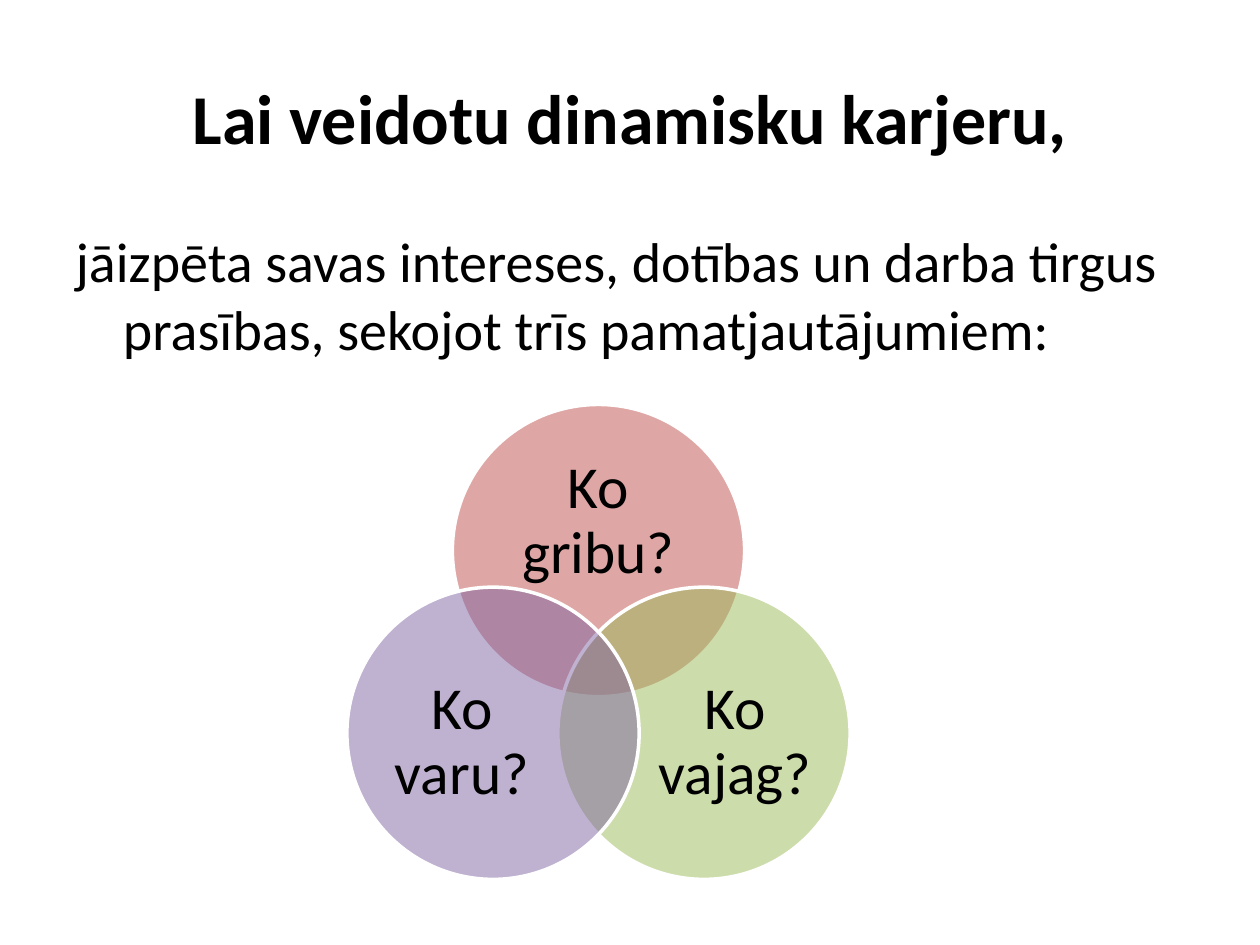
import math

from lxml import etree
from pptx import Presentation
from pptx import util as u
from pptx.dml.color import RGBColor
from pptx.enum import shapes, text
from pptx.oxml import ns

Pt = u.Pt


def color(hex_code):
    return RGBColor.from_string(hex_code)


class SlideBuilder:
    font = "Calibri"
    ink = "000000"
    outline = "FFFFFF"

    def __init__(self, slide):
        self.slide = slide

    def place(self, item, left, top, width, height):
        item.left, item.top = Pt(left), Pt(top)
        item.width, item.height = Pt(width), Pt(height)

    def add_words(self, frame, words, size, align, bold=False):
        frame.word_wrap = True
        frame.auto_size = text.MSO_AUTO_SIZE.NONE
        paragraph = frame.paragraphs[0]
        paragraph.alignment = align
        run = paragraph.add_run()
        run.text = words
        run.font.name, run.font.size, run.font.bold = self.font, Pt(size), bold
        run.font.color.rgb = color(self.ink)
        return paragraph

    def title(self, words, box):
        heading = self.slide.shapes.title
        self.place(heading, *box)
        heading.text_frame.vertical_anchor = text.MSO_ANCHOR.MIDDLE
        self.add_words(heading.text_frame, words, 40, text.PP_ALIGN.CENTER, bold=True)

    def body(self, words, box, hanging):
        intro = self.slide.placeholders[1]
        self.place(intro, *box)
        paragraph = self.add_words(intro.text_frame, words, 32, text.PP_ALIGN.LEFT)
        # Hanging indent without a bullet
        properties = paragraph._p.get_or_add_pPr()
        properties.set("marL", str(Pt(hanging)))
        properties.set("indent", str(-Pt(hanging)))
        etree.SubElement(properties, ns.qn("a:buNone"))

    def circle(self, center_x, center_y, diameter, fill, opacity=50):
        disc = self.slide.shapes.add_shape(
            shapes.MSO_SHAPE.OVAL, Pt(center_x - diameter / 2),
            Pt(center_y - diameter / 2), Pt(diameter), Pt(diameter))
        disc.shadow.inherit = False
        disc.fill.solid()
        disc.fill.fore_color.rgb = color(fill)
        tint = disc.fill._xPr.find(".//" + ns.qn("a:srgbClr"))
        etree.SubElement(tint, ns.qn("a:alpha"), val=str(opacity * 1000))
        disc.line.color.rgb = color(self.outline)
        disc.line.width = Pt(2)

    def label(self, words, box):
        question = self.slide.shapes.add_textbox(*map(Pt, box))
        frame = question.text_frame
        frame.margin_left = frame.margin_right = 0
        frame.margin_top = frame.margin_bottom = 0
        frame.vertical_anchor = text.MSO_ANCHOR.MIDDLE
        paragraph = self.add_words(frame, words, 34, text.PP_ALIGN.CENTER)
        paragraph.line_spacing = 0.9


def main():
    deck = Presentation()
    deck.slide_width, deck.slide_height = Pt(720), Pt(540)
    builder = SlideBuilder(deck.slides.add_slide(deck.slide_layouts[1]))

    # Heading and introduction
    builder.title("Lai veidotu dinamisku karjeru,", (36, 21.6, 648, 90))
    builder.body("jāizpēta savas intereses, dotības un darba tirgus prasības, "
                 "sekojot trīs pamatjautājumiem:", (36, 126, 672, 356.4), 27)

    # Three overlapping circles, evenly spaced around one centre
    venn_x, venn_y, reach, diameter = 342, 384.2, 69.6, 167
    questions = [
        ("Ko gribu?", "BF504D", (280.8, 260.6, 122.4, 75)),
        ("Ko vajag?", "9BBB59", (370, 378.7, 100, 91.4)),
        ("Ko varu?", "8064A2", (214, 378.7, 100, 91.4)),
    ]
    for index, (words, fill, box) in enumerate(questions):
        angle = math.radians(-90 + index * 360 / len(questions))
        builder.circle(venn_x + reach * math.cos(angle),
                       venn_y + reach * math.sin(angle), diameter, fill)
        builder.label(words, box)

    deck.save("out.pptx")


if __name__ == "__main__":
    main()
